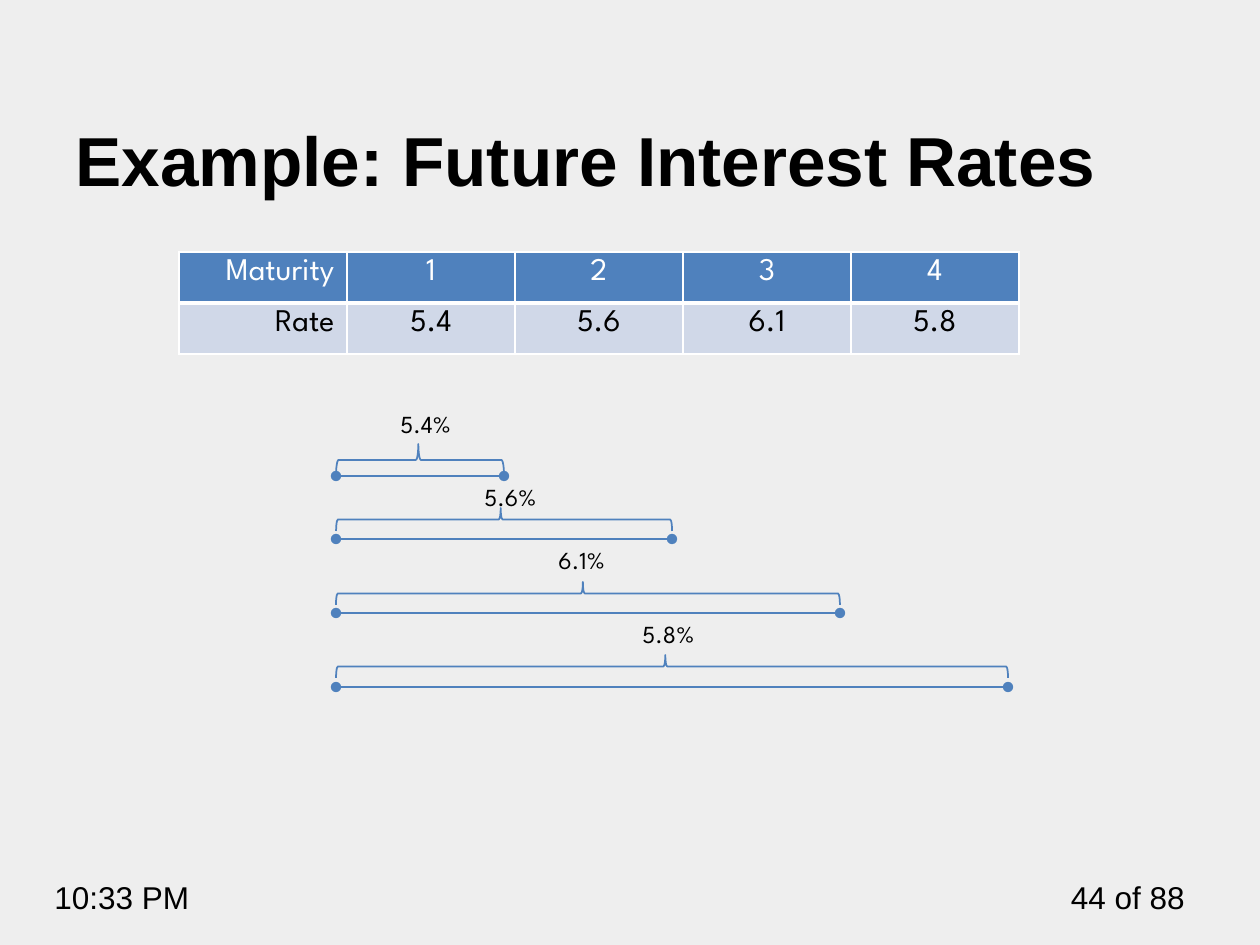
from pptx import Presentation
from pptx.dml.color import RGBColor
from pptx.enum.shapes import MSO_CONNECTOR as CONN, MSO_SHAPE as SHAPE
from pptx.enum.text import MSO_ANCHOR as ANCHOR, PP_ALIGN as ALIGN
from pptx.oxml.ns import qn
from pptx.util import Pt
from lxml.etree import SubElement

# Content
RATES = [("1", "5.4"), ("2", "5.6"), ("3", "6.1"), ("4", "5.8")]
TABLE = [["Maturity"] + [m for m, _ in RATES], ["Rate"] + [r for _, r in RATES]]
# One span per maturity: line y, brace top, brace thickness, label left, top, width
SPANS = [
    (476, 444, 32, 388, 403, 126),
    (539, 508, 23, 472, 476, 105),
    (613, 582, 23, 546, 539, 105),
    (687, 655, 23, 630, 613, 105),
]
TEXTS = [
    ("44 of 88", (1008, 872, 189, 50), {"size": 18}, ALIGN.RIGHT, ANCHOR.TOP),
    ("10:33 PM", (42, 872, 199, 50), {"size": 18}, ALIGN.LEFT, ANCHOR.TOP),
    ("Example: Future Interest Rates", (63, 49, 1134, 158),
     {"size": 39.6, "bold": True}, ALIGN.LEFT, ANCHOR.BOTTOM),
]

# Layout and style
UNIT = 168  # table column width, and line length of one year
LINE_X = 336
TABLE_X, TABLE_Y, ROW_H = 179, 252, 51
COLORS = {"bg": "EEEEEE", "blue": "4F81BD", "pale": "D0D8E8",
          "white": "FFFFFF", "black": "000000"}
SPARTAN = "League Spartan"


def px(n):
    return round(n * 914400 / 126)


def rgb(name):
    return RGBColor.from_string(COLORS[name])


def write(tf, text, fmt, align=ALIGN.LEFT, color="black"):
    p = tf.paragraphs[0]
    p.alignment = align
    r = p.add_run()
    r.text = text
    for key, value in {"name": "Arial", **fmt}.items():
        setattr(r.font, key, Pt(value) if key == "size" else value)
    r.font.color.rgb = rgb(color)


def add_text(text, box, fmt, align=ALIGN.LEFT, anchor=ANCHOR.TOP):
    tf = s.shapes.add_textbox(*map(px, box)).text_frame
    tf.word_wrap = True
    tf.vertical_anchor = anchor
    write(tf, text, fmt, align)


def set_borders(cell, row):
    tc_pr = cell._tc.get_or_add_tcPr()
    for i, side in enumerate(("lnL", "lnR", "lnT", "lnB")):
        width = 3 if row == 0 and side == "lnB" else 1
        ln = SubElement(tc_pr, qn(f"a:{side}"), w=str(Pt(width)))
        tc_pr.remove(ln)
        tc_pr.insert(i, ln)
        fill = SubElement(ln, qn("a:solidFill"))
        SubElement(fill, qn("a:srgbClr"), val=COLORS["white"])


def add_line(x1, x2, y):
    line = s.shapes.add_connector(CONN.STRAIGHT, px(x1), px(y), px(x2), px(y))
    line.line.color.rgb = rgb("blue")
    line.line.width = Pt(1)
    ln = line.line._get_or_add_ln()
    for end in ("headEnd", "tailEnd"):
        SubElement(ln, qn(f"a:{end}"), type="oval")
    SubElement(line._element.spPr, qn("a:effectLst"))


def add_brace(x, y, width, thick):
    # A left brace mirrored and turned so that it points up
    left, top = x + (width - thick) / 2, y + (thick - width) / 2
    sp = s.shapes.add_shape(SHAPE.LEFT_BRACE, px(left), px(top), px(thick), px(width))
    sp.rotation = 270
    sp._element.spPr.find(qn("a:xfrm")).set("flipH", "1")
    sp.adjustments[0], sp.adjustments[1] = 0.08, 0.49
    sp.shadow.inherit = False
    sp.fill.background()
    sp.line.color.rgb = rgb("blue")
    sp.line.width = Pt(1)


prs = Presentation()
prs.slide_width, prs.slide_height = px(1260), px(945)
s = prs.slides.add_slide(prs.slide_layouts[6])
s.background.fill.solid()
s.background.fill.fore_color.rgb = rgb("bg")

# Title and footer
for item in TEXTS:
    add_text(*item)

# Rate table
n_rows, n_cols = len(TABLE), len(TABLE[0])
table = s.shapes.add_table(n_rows, n_cols, px(TABLE_X), px(TABLE_Y),
                           px(UNIT * n_cols), px(ROW_H * n_rows)).table
for r, row in enumerate(TABLE):
    for c, text in enumerate(row):
        cell = table.cell(r, c)
        cell.fill.solid()
        cell.fill.fore_color.rgb = rgb("pale" if r else "blue")
        set_borders(cell, r)
        write(cell.text_frame, text, {"name": SPARTAN, "size": 18, "bold": False},
              ALIGN.CENTER if c else ALIGN.RIGHT, "black" if r else "white")

# Time spans with braces and rates
for years, ((_, rate), span) in enumerate(zip(RATES, SPANS), 1):
    line_y, brace_y, thick, label_x, label_y, label_w = span
    add_line(LINE_X, LINE_X + UNIT * years, line_y)
    add_brace(LINE_X, brace_y, UNIT * years, thick)
    add_text(f"{rate}%", (label_x, label_y, label_w, 43), {"name": SPARTAN, "size": 14})

prs.save("out.pptx")
